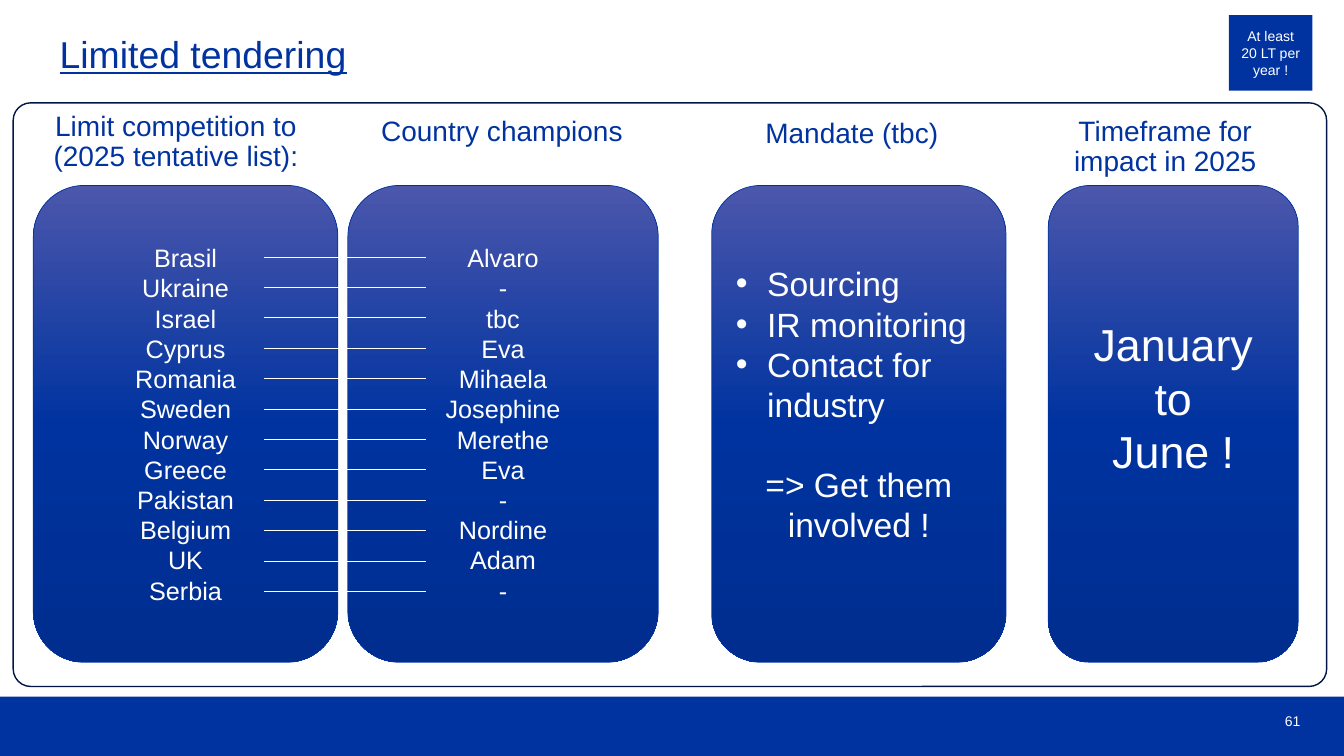
from copy import deepcopy

from lxml.etree import SubElement
from pptx import Presentation
from pptx.dml.color import RGBColor
from pptx.enum.shapes import MSO_CONNECTOR, MSO_SHAPE
from pptx.enum.text import MSO_ANCHOR, MSO_AUTO_SIZE, PP_ALIGN
from pptx.oxml.ns import qn
from pptx.util import Inches, Pt

WIDTH, HEIGHT = Inches(13.333), Inches(7.5)
COL, ROW = WIDTH / 100, HEIGHT / 100
BLUE, WHITE, NAVY = "0033A0", "FFFFFF", "001646"
SHADES = (0, "4B57AB"), (0.5, BLUE), (1, "002D8E")
TOP, TALL = 24.53, 63.07
LEFT, MID, RIGHT = PP_ALIGN.LEFT, PP_ALIGN.CENTER, PP_ALIGN.RIGHT
PAIRS = [
    ("Brasil", "Alvaro"), ("Ukraine", "-"), ("Israel", "tbc"),
    ("Cyprus", "Eva"), ("Romania", "Mihaela"), ("Sweden", "Josephine"),
    ("Norway", "Merethe"), ("Greece", "Eva"), ("Pakistan", "-"),
    ("Belgium", "Nordine"), ("UK", "Adam"), ("Serbia", "-"),
]


def paint(part, hue):
    """Give a font, line or fill a solid colour from a hex string."""
    fill = part.fill if hasattr(part, "fill") else part
    fill.solid()
    fill.fore_color.rgb = RGBColor.from_string(hue)


def grid(x, y, w, h):
    """Turn columns and rows into slide lengths."""
    return round(x * COL), round(y * ROW), round(w * COL), round(h * ROW)


def frame(box, anchor=MSO_ANCHOR.MIDDLE, pad=None, foot=None):
    """Set wrapping, anchor and insets of a box's text."""
    text = box.text_frame
    text.word_wrap = True
    text.auto_size = MSO_AUTO_SIZE.NONE
    text.vertical_anchor = anchor
    if pad is not None:
        text.margin_left = text.margin_right = Inches(pad)
        text.margin_top = text.margin_bottom = Inches(pad)
    if foot is not None:
        text.margin_bottom = Inches(foot)


def write(box, text, size=18, hue=WHITE, align=MID, lead=None, gap=None,
          bullet=False, under=None):
    """Add one formatted paragraph to a box."""
    body = box.text_frame
    para = body.add_paragraph() if body.text else body.paragraphs[0]
    para.alignment = align
    if lead:
        para.line_spacing = lead
    if gap:
        para.space_before = Pt(gap)
    if bullet:
        props = para._p.get_or_add_pPr()
        props.set("marL", str(Inches(0.31)))
        props.set("indent", str(-Inches(0.31)))
        SubElement(props, qn("a:buFont"), typeface="Arial")
        SubElement(props, qn("a:buChar"), char="•")
    run = para.add_run()
    run.text = text
    run.font.name = "Arial"
    run.font.size = Pt(size)
    run.font.underline = under
    paint(run.font, hue)


def block(slide, kind, *area, fill=None, line=None, width=1):
    """Draw a flat shape with an optional fill and outline."""
    box = slide.shapes.add_shape(kind, *grid(*area))
    box.shadow.inherit = False
    if fill:
        paint(box.fill, fill)
    else:
        box.fill.background()
    if line:
        paint(box.line, line)
        box.line.width = Pt(width)
    else:
        box.line.fill.background()
    return box


def card(slide, x, w, foot=None):
    """Draw a rounded card with a vertical blue gradient."""
    box = block(slide, MSO_SHAPE.ROUNDED_RECTANGLE, x, TOP, w, TALL,
                line=BLUE, width=0.5)
    box.fill.gradient()
    box.fill.gradient_angle = 270
    stops = box.element.spPr.find(".//" + qn("a:gsLst"))
    stops.append(deepcopy(stops[-1]))
    for stop, (place, hue) in zip(box.fill.gradient_stops, SHADES):
        stop.position = place
        stop.color.rgb = RGBColor.from_string(hue)
    frame(box, foot=foot)
    return box


def label(slide, text, *area, anchor=MSO_ANCHOR.TOP, **look):
    """Place a text box without insets."""
    box = slide.shapes.add_textbox(*grid(*area))
    frame(box, anchor, 0)
    write(box, text, **look)


def rule(slide, x, y, end):
    """Draw a thin white level line."""
    left, top, right, _ = grid(x, y, end, 0)
    line = slide.shapes.add_connector(MSO_CONNECTOR.STRAIGHT, left, top, right, top)
    paint(line.line, WHITE)
    line.line.width = Pt(0.5)
    SubElement(line.element.spPr, qn("a:effectLst"))


def main():
    """Build and save the slide."""
    deck = Presentation()
    deck.slide_width, deck.slide_height = WIDTH, HEIGHT
    slide = deck.slides.add_slide(deck.slide_layouts[5])

    title = slide.shapes.title
    title.left, title.top, title.width, title.height = grid(4.43, 4.8, 86.25, 8.8)
    frame(title, MSO_ANCHOR.TOP, 0)
    write(title, "Limited tendering", size=26.7, hue=BLUE, align=LEFT,
          lead=0.9, under=True)

    block(slide, MSO_SHAPE.RECTANGLE, 0, 92.13, 100, 7.87, fill=BLUE)

    heads = [
        ("Limit competition to (2025 tentative list):", 2.48, 14.8, 21.23),
        ("Country champions", 28.05, 15.47, 18.6),
        ("Mandate (tbc)", 54.08, 15.73, 18.6),
        ("Timeframe for impact in 2025", 77.4, 15.47, 18.6),
    ]
    for text, x, y, w in heads:
        label(slide, text, x, y, w, 8.8, size=20, hue=BLUE, lead=0.9)

    lands = card(slide, 2.48, 22.65)
    champs = card(slide, 25.88, 23.1)
    for row, (land, champ) in enumerate(PAIRS):
        write(lands, land)
        write(champs, champ)
        rule(slide, 19.65, 34 + 4.02 * row, 31.72)

    tasks = card(slide, 52.95, 21.9, foot=0.45)
    for task in ("Sourcing", "IR monitoring", "Contact for industry"):
        write(tasks, task, size=24, align=LEFT, bullet=True)
    write(tasks, "=> Get them involved !", size=24, gap=28)

    months = card(slide, 78, 18.6, foot=0.58)
    for text in ("January to", "June !"):
        write(months, text, size=32)

    edge = block(slide, MSO_SHAPE.ROUNDED_RECTANGLE, 0.98, 13.6, 97.73, 77.2,
                 line=NAVY)
    edge.adjustments[0] = 0.03

    tag = block(slide, MSO_SHAPE.RECTANGLE, 91.43, 2, 6.23, 10, fill=BLUE)
    frame(tag)
    write(tag, "At least 20 LT per year !", size=10)
    label(slide, "61", 91.13, 92.67, 5.63, 5.33, anchor=MSO_ANCHOR.MIDDLE,
          size=10, align=RIGHT)

    deck.save("out.pptx")


if __name__ == "__main__":
    main()
